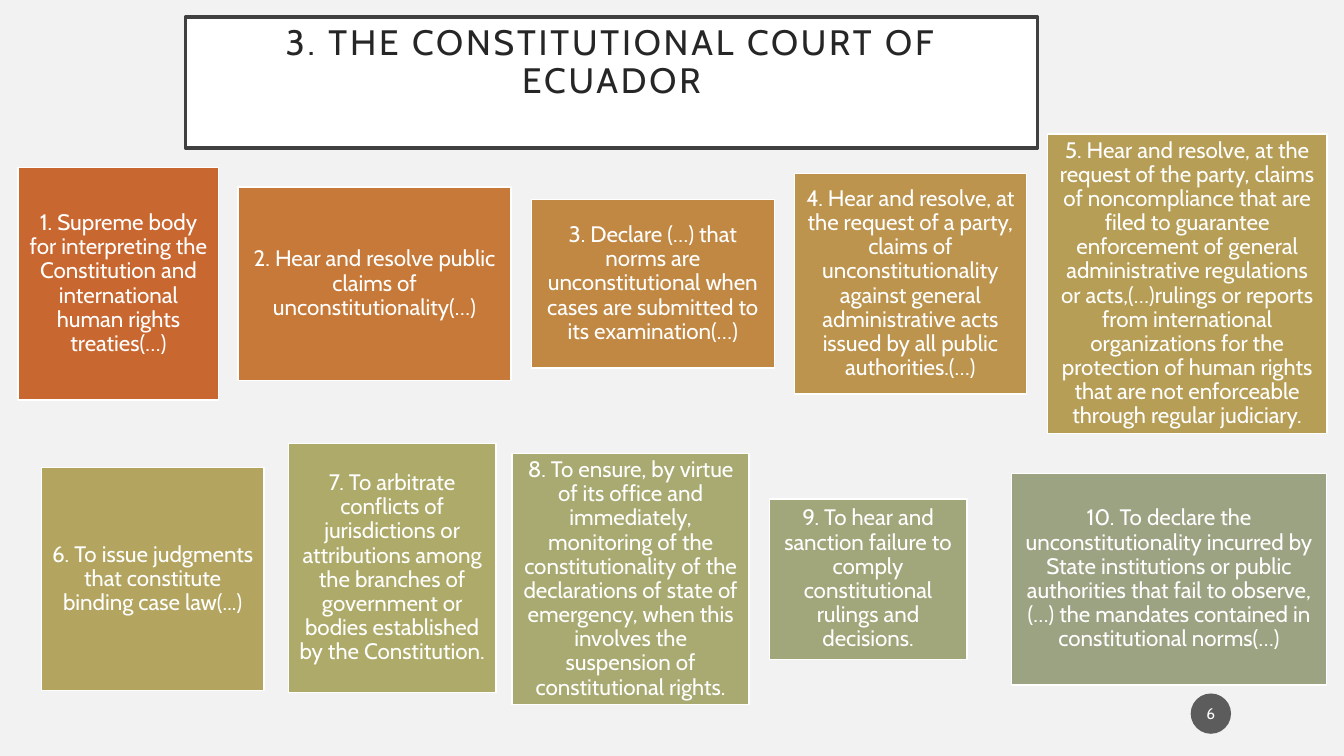
from lxml.etree import SubElement
from pptx import Presentation
from pptx.dml.color import RGBColor
from pptx.enum.shapes import MSO_SHAPE as SHAPE
from pptx.enum.text import MSO_ANCHOR as ANCHOR, MSO_AUTO_SIZE as AUTO, PP_ALIGN as ALIGN
from pptx.oxml.ns import qn
from pptx.util import Inches, Pt

BACKGROUND = RGBColor(0xF2, 0xF2, 0xF2)
WHITE = RGBColor(0xFF, 0xFF, 0xFF)
FRAME = RGBColor(0x40, 0x40, 0x40)
TITLE_INK = RGBColor(0x26, 0x26, 0x26)
BADGE = RGBColor(0x1D, 0x1D, 0x1D)
POWER_FILLS = [RGBColor.from_string(c) for c in (
    "C96731", "C67938", "C18843", "BC944D", "B79E56",
    "B3A560", "AEAA69", "A9AA72", "A1A77B", "9CA383")]

# Each row of powers: centre line, then (left, width, height, shift from centre, text)
POWER_ROWS = [
    (28.15, [
        (1.8, 19.9, 23.1, 0, "1. Supreme body for interpreting the Constitution and "
         "international human rights treaties(…)"),
        (23.6, 27.1, 19.2, 0, "2. Hear and resolve public claims of unconstitutionality(…)"),
        (52.7, 24.1, 16.7, 0, "3. Declare (…) that norms are unconstitutional when cases "
         "are submitted to its examination(…)"),
        (78.8, 23, 21.9, 0, "4. Hear and resolve, at the request of a party, claims of "
         "unconstitutionality against general administrative acts issued by all public "
         "authorities.(…)"),
        (103.9, 27.7, 29.7, 0, "5. Hear and resolve, at the request of the party, claims of "
         "noncompliance that are filed to guarantee enforcement of general administrative "
         "regulations or acts,(…)rulings or reports from international organizations for the "
         "protection of human rights that are not enforceable through regular judiciary."),
    ]),
    (57.45, [
        (4.1, 22.1, 22.1, 0, "6. To issue judgments that constitute binding case law(...)"),
        (28.6, 20.6, 24.7, -1.1, "7. To arbitrate conflicts of jurisdictions or attributions "
         "among the branches of government or bodies established by the Constitution."),
        (50.8, 23.5, 24.9, 0, "8. To ensure, by virtue of its office and immediately, "
         "monitoring of the constitutionality of the declarations of state of emergency, "
         "when this involves the suspension of constitutional rights."),
        (76.3, 19.6, 15.9, 0, "9. To hear and sanction failure to comply constitutional "
         "rulings and decisions."),
        (100.3, 31.3, 21, 0, "10. To declare the unconstitutionality incurred by State "
         "institutions or public authorities that fail to observe,(…) the mandates contained "
         "in constitutional norms(…)"),
    ]),
]


class CourtSlide:
    """Slide on a square grid: 133.3 columns by 75 rows."""
    FONT = "Cabin"
    CELL = Inches(0.1)

    def __init__(self, prs):
        self.s = prs.slides.add_slide(prs.slide_layouts[5])
        self.s.background.fill.solid()
        self.s.background.fill.fore_color.rgb = BACKGROUND

    def grid(self, *cells):
        return [int(c * self.CELL) for c in cells]

    def paint(self, sp, fill, line=None, weight=1):
        sp.fill.solid()
        sp.fill.fore_color.rgb = fill
        if line is None:
            sp.line.fill.background()
        else:
            sp.line.color.rgb = line
            sp.line.width = Pt(weight)

    def label(self, sp, text, size, color, insets, spacing=0.9):
        """Set centred text; insets are left, top, right, bottom in cells."""
        tf = sp.text_frame
        tf.text = text
        tf.word_wrap = True
        tf.auto_size = AUTO.NONE
        tf.vertical_anchor = ANCHOR.MIDDLE
        (tf.margin_left, tf.margin_top,
         tf.margin_right, tf.margin_bottom) = self.grid(*insets)
        p = tf.paragraphs[0]
        p.alignment = ALIGN.CENTER
        p.line_spacing = spacing
        r = p.runs[0]
        r.font.name = self.FONT
        r.font.size = Pt(size)
        r.font.color.rgb = color
        return r

    def title(self, text, left, top, width, height):
        sp = self.s.shapes.title
        sp.left, sp.top, sp.width, sp.height = self.grid(left, top, width, height)
        self.paint(sp, WHITE, FRAME, 2.5)
        r = self.label(sp, text, 25.2, TITLE_INK, (2, 2, 2, 5.8))
        r.font._element.set("spc", "200")

    def shape(self, kind, *place):
        sp = self.s.shapes.add_shape(kind, *self.grid(*place))
        sp.shadow.inherit = False
        return sp

    def power(self, text, fill, left, middle, width, height):
        sp = self.shape(SHAPE.RECTANGLE, left, middle - height / 2, width, height)
        self.paint(sp, fill, WHITE)
        self.label(sp, text, 16, WHITE, [0.7] * 4)

    def page_badge(self, number, left, top, size):
        sp = self.shape(SHAPE.OVAL, left, top, size, size)
        self.paint(sp, BADGE)
        color = sp._element.spPr.find(qn("a:solidFill"))[0]
        SubElement(color, qn("a:alpha"), val="70000")
        self.label(sp, number, 11, WHITE, (0.2, 0.5, 0.2, 0.5), 1)


def main():
    prs = Presentation()
    prs.slide_width, prs.slide_height = Inches(13.33), Inches(7.5)
    court = CourtSlide(prs)
    court.title("3. THE CONSTITUTIONAL COURT OF ECUADOR", 18.4, 1.7, 84.5, 13)
    fills = iter(POWER_FILLS)
    for middle, powers in POWER_ROWS:
        for left, width, height, shift, text in powers:
            court.power(text, next(fills), left, middle + shift, width, height)
    court.page_badge("6", 118.1, 68.8, 4)
    prs.save("out.pptx")


if __name__ == "__main__":
    main()
